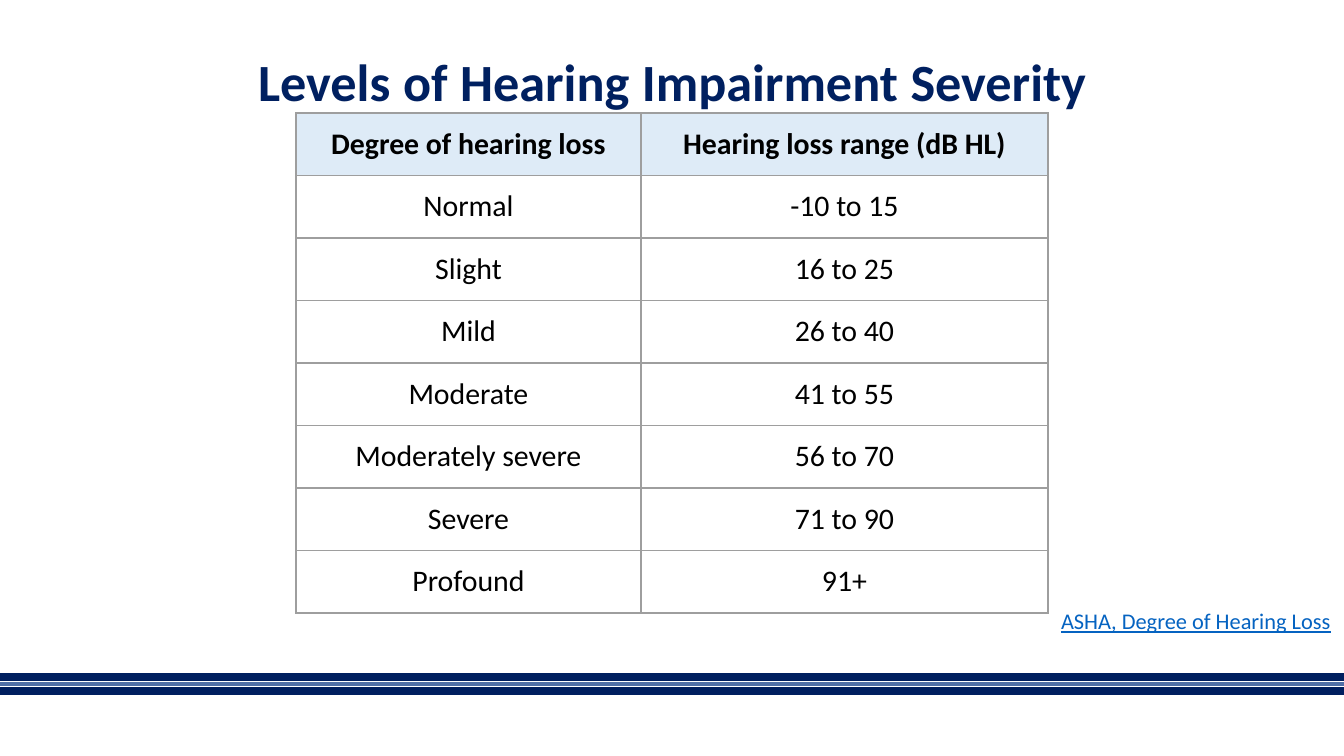
from pptx import Presentation
from pptx.dml.color import RGBColor
from pptx.enum import shapes, text
from pptx.oxml import parse_xml
from pptx.oxml.ns import nsdecls
from pptx.util import Emu, Pt

TITLE = "Levels of Hearing Impairment Severity"
ROWS = [
    ("Degree of hearing loss", "Hearing loss range (dB HL)"),
    ("Normal", "-10 to 15"),
    ("Slight", "16 to 25"),
    ("Mild", "26 to 40"),
    ("Moderate", "41 to 55"),
    ("Moderately severe", "56 to 70"),
    ("Severe", "71 to 90"),
    ("Profound", "91+"),
]
SOURCE = "ASHA, Degree of Hearing Loss"

NAVY = RGBColor(0x00, 0x20, 0x60)
BAND = RGBColor(0x00, 0x1F, 0x5F)
STEEL = RGBColor(0x50, 0x70, 0xA7)
PALE = RGBColor(0xDE, 0xEB, 0xF7)
WHITE = RGBColor(0xFF, 0xFF, 0xFF)
BLACK = RGBColor(0x00, 0x00, 0x00)
GREY = RGBColor(0x9E, 0x9E, 0x9E)
LINK = RGBColor(0x05, 0x63, 0xC1)

FONT = "Calibri"
WIDE, HIGH = 1344, 756
PAD = 13
COLS = (345, 407)
ROW = 58
# y, colour, weight in points
STRIPES = [(677, BAND, 4.5), (684, STEEL, 2.25), (691, BAND, 4.5)]


def px(n):
    return Emu(round(n * 914400 / 134.4))


def style(run, size, color, bold=False):
    font = run.font
    font.name, font.size, font.bold = FONT, Pt(size), bold
    font.color.rgb = color


def inset(box):
    """Give a text frame or a cell the same margin on all sides."""
    box.margin_left = box.margin_right = px(PAD)
    box.margin_top = box.margin_bottom = px(PAD)


def place(shape, *spot):
    shape.left, shape.top, shape.width, shape.height = map(px, spot)


def edge(cell):
    props = cell._tc.get_or_add_tcPr()
    for i, side in enumerate("LRTB"):
        props.insert(i, parse_xml(
            f'<a:ln{side} {nsdecls("a")} w="{Pt(0.75)}"><a:solidFill>'
            f'<a:srgbClr val="{GREY}"/></a:solidFill></a:ln{side}>'))


def add_stripes(slide):
    for y, color, weight in STRIPES:
        line = slide.shapes.add_connector(
            shapes.MSO_CONNECTOR.STRAIGHT, 0, px(y), px(WIDE), px(y))
        line.line.color.rgb = color
        line.line.width = Pt(weight)
        line._element.spPr.append(parse_xml(f'<a:effectLst {nsdecls("a")}/>'))


def add_title(slide):
    title = slide.shapes.title
    place(title, 93, 40, 1158, 146)
    frame = title.text_frame
    inset(frame)
    frame.auto_size = text.MSO_AUTO_SIZE.NONE
    frame.vertical_anchor = text.MSO_ANCHOR.TOP
    para = frame.paragraphs[0]
    para.alignment = text.PP_ALIGN.CENTER
    para.line_spacing = 0.9
    for i, word in enumerate(TITLE.split()):
        if i:
            gap = para.add_run()
            gap.text = " "
            style(gap, 30, BLACK, True)
        run = para.add_run()
        run.text = word
        style(run, 28, NAVY, True)


def add_levels(slide):
    table = slide.shapes.add_table(
        len(ROWS), len(COLS), px(296), px(113),
        px(sum(COLS)), px(ROW * len(ROWS))).table
    for col, width in zip(table.columns, COLS):
        col.width = px(width)
    for r, row in enumerate(ROWS):
        table.rows[r].height = px(ROW)
        for c, label in enumerate(row):
            cell = table.cell(r, c)
            inset(cell)
            cell.fill.solid()
            cell.fill.fore_color.rgb = WHITE if r else PALE
            edge(cell)
            para = cell.text_frame.paragraphs[0]
            para.text = label
            para.alignment = text.PP_ALIGN.CENTER
            style(para.runs[0], 16, BLACK, r == 0)


def add_source(slide):
    frame = slide.shapes.add_textbox(
        px(1048), px(594), px(328), px(70)).text_frame
    frame.word_wrap = True
    inset(frame)
    frame.text = SOURCE
    run = frame.paragraphs[0].runs[0]
    style(run, 12, LINK)
    run.font.underline = True


def main():
    deck = Presentation()
    deck.slide_width, deck.slide_height = px(WIDE), px(HIGH)
    slide = deck.slides.add_slide(deck.slide_layouts[5])
    add_stripes(slide)
    add_title(slide)
    add_levels(slide)
    add_source(slide)
    deck.save("out.pptx")


if __name__ == "__main__":
    main()
